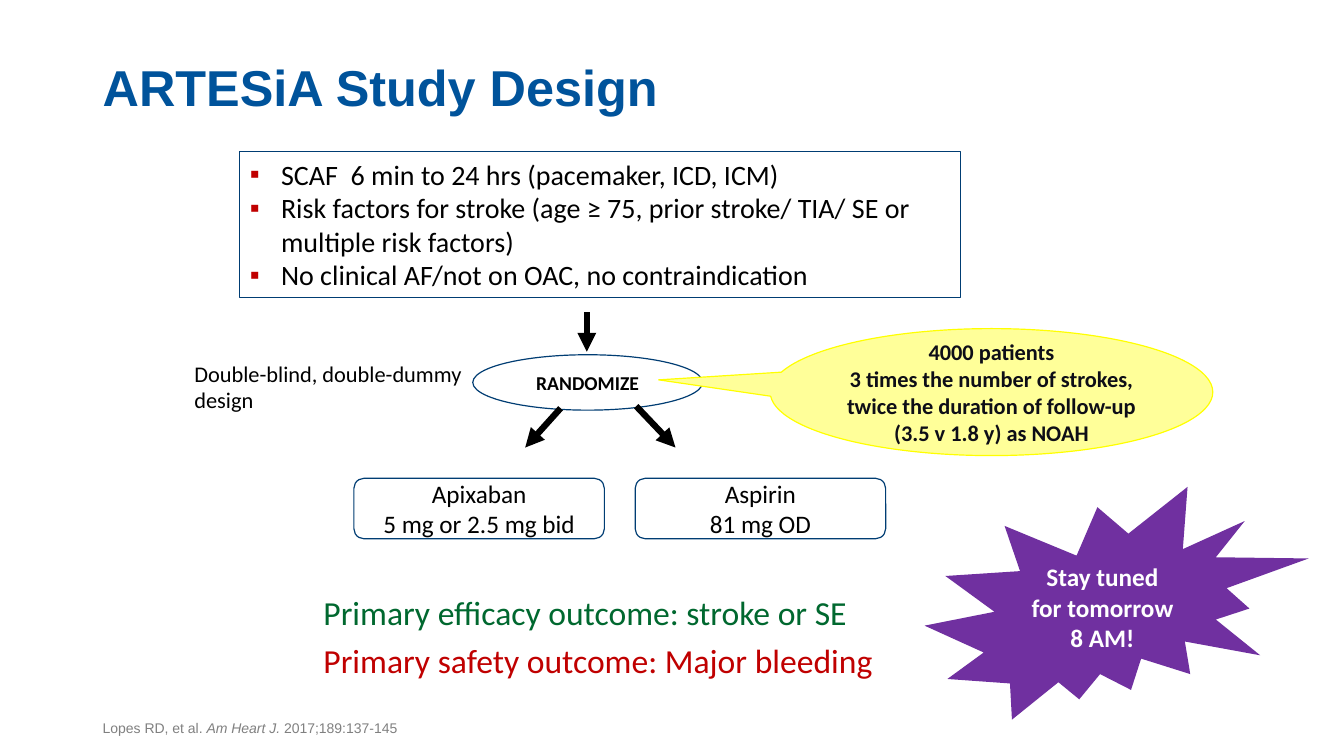
from dataclasses import dataclass

from lxml import etree
from pptx import Presentation
from pptx.dml.color import RGBColor
from pptx.enum.shapes import MSO_CONNECTOR, MSO_SHAPE
from pptx.enum.text import MSO_ANCHOR, PP_ALIGN
from pptx.oxml.ns import qn
from pptx.util import Inches, Pt

RECT, ROUNDED, OVAL = MSO_SHAPE.RECTANGLE, MSO_SHAPE.ROUNDED_RECTANGLE, MSO_SHAPE.OVAL
BUBBLE, BURST = MSO_SHAPE.OVAL_CALLOUT, MSO_SHAPE.EXPLOSION2
STRAIGHT = MSO_CONNECTOR.STRAIGHT
TOP, MIDDLE, BOTTOM = MSO_ANCHOR.TOP, MSO_ANCHOR.MIDDLE, MSO_ANCHOR.BOTTOM
LEFT, CENTER = PP_ALIGN.LEFT, PP_ALIGN.CENTER


@dataclass(frozen=True)
class Theme:
    heading_font: str = "Arial"
    body_font: str = "Calibri"
    heading: str = "00539B"
    citation: str = "808080"
    ink: str = "000000"
    outline: str = "003D73"
    green: str = "00682F"
    red: str = "C00000"
    bubble: str = "FFFF99"
    bubble_edge: str = "FFFF00"
    bubble_ink: str = "0E0E17"
    burst: str = "7030A0"
    white: str = "FFFFFF"
    title_size: int = 36
    outcome_size: int = 24
    criteria_size: int = 20
    arm_size: int = 18
    note_size: int = 16
    step_size: int = 14
    citation_size: int = 10
    outline_width: float = 0.85
    arrow_width: float = 4.5


THEME = Theme()

# Content: a paragraph is a string or a list of (text, italic) runs
TITLE = ["ARTESiA Study Design"]
CITATION = [[("Lopes RD, et al. ", False), ("Am Heart J. ", True), ("2017;189:137-145", False)]]
CRITERIA = [
    "SCAF  6 min to 24 hrs (pacemaker, ICD, ICM)",
    "Risk factors for stroke (age ≥ 75, prior stroke/ TIA/ SE or multiple risk factors)",
    "No clinical AF/not on OAC, no contraindication",
]
STEP = ["RANDOMIZE"]
BLINDING = ["Double-blind, double-dummy design"]
ARMS = [["Apixaban", "5 mg or 2.5 mg bid"], ["Aspirin", "81 mg OD"]]
SAMPLE = [
    "4000 patients",
    "3 times the number of strokes, twice the duration of follow-up (3.5 v 1.8 y) as NOAH",
]
OUTCOMES = ["Primary efficacy outcome: stroke or SE", "Primary safety outcome: Major bleeding"]
TEASER = ["Stay tuned for tomorrow 8 AM!"]

# Layout on a grid of 100 columns by 100 rows: left, top, width, height
MARGIN, TEXT_WIDTH = 6.9, 86.27
STEP_TOP = 46.93
TITLE_AT = (MARGIN, 0, TEXT_WIDTH, 16.13)
CITATION_AT = (MARGIN, 92.67, TEXT_WIDTH, 5.33)
CRITERIA_AT = (17.85, 20, 53.64, 19.33)
STEP_AT = (35.18, STEP_TOP, 17.1, 7.33)
BLINDING_AT = (13.73, STEP_TOP, 22.21, 8.53)
ARM_AT, ARM_PITCH = (26.33, 63.27, 18.64, 8), 20.93
SAMPLE_AT, SAMPLE_TIP = (57.31, 43.47, 32.93, 16.8), (-0.752, -0.096)
OUTCOMES_AT = (23.33, 77.6, 42.76, 13.2)
TEASER_AT = (68.79, 64.4, 28.58, 30.8)
ARROWS = [
    ((43.66, 41.33), (43.66, 46.53)),
    ((41.71, 54), (39.08, 59.2)),
    ((47.34, 53.73), (50.26, 59.2)),
]

deck = Presentation()
deck.slide_width, deck.slide_height = Inches(13.33), Inches(7.5)
slide = deck.slides.add_slide(deck.slide_layouts[6])


def place(*cells):
    """Turn alternating columns and rows into slide lengths."""
    sides = (deck.slide_width, deck.slide_height)
    return [round(cell * sides[i % 2] / 100) for i, cell in enumerate(cells)]


def add_bullet(paragraph):
    props = paragraph._p.get_or_add_pPr()
    props.set("marL", str(Inches(0.31)))
    props.set("indent", str(-Inches(0.31)))
    color = etree.SubElement(props, qn("a:buClr"))
    etree.SubElement(color, qn("a:srgbClr"), val=THEME.red)
    etree.SubElement(props, qn("a:buFont"), typeface=THEME.heading_font)
    etree.SubElement(props, qn("a:buChar"), char="▪")


def write(shape, paragraphs, size, colors=(THEME.ink,), font=THEME.body_font, bold=False,
          align=LEFT, anchor=MIDDLE, wrap=True, bullets=False, gap=None, spacing=None):
    """Fill a shape with text; the last colour serves all further paragraphs."""
    frame = shape.text_frame
    frame.word_wrap, frame.vertical_anchor = wrap, anchor
    for i, content in enumerate(paragraphs):
        paragraph = frame.add_paragraph() if i else frame.paragraphs[0]
        paragraph.alignment = align
        if bullets:
            add_bullet(paragraph)
        if gap and i:
            paragraph.space_before = Pt(gap)
        if spacing:
            paragraph.line_spacing = spacing
        for words, italic in [(content, False)] if isinstance(content, str) else content:
            run = paragraph.add_run()
            run.text = words
            run.font.name, run.font.size = font, Pt(size)
            run.font.bold, run.font.italic = bold, italic
            run.font.color.rgb = RGBColor.from_string(colors[min(i, len(colors) - 1)])


def add_text(at, paragraphs, size, **style):
    write(slide.shapes.add_textbox(*place(*at)), paragraphs, size, **style)


def add_box(kind, at, paragraphs, size, fill=None, edge=THEME.outline, tip=(), **style):
    box = slide.shapes.add_shape(kind, *place(*at))
    box.shadow.inherit = False
    for i, value in enumerate(tip):
        box.adjustments[i] = value
    if fill:
        box.fill.solid()
        box.fill.fore_color.rgb = RGBColor.from_string(fill)
    else:
        box.fill.background()
    if edge:
        box.line.color.rgb = RGBColor.from_string(edge)
        box.line.width = Pt(THEME.outline_width)
    else:
        box.line.fill.background()
    write(box, paragraphs, size, **style)


def add_arrow(start, end):
    arrow = slide.shapes.add_connector(STRAIGHT, *place(*start, *end))
    arrow.line.color.rgb = RGBColor.from_string(THEME.ink)
    arrow.line.width = Pt(THEME.arrow_width)
    etree.SubElement(arrow.line._get_or_add_ln(), qn("a:tailEnd"), type="triangle")
    etree.SubElement(arrow._element.spPr, qn("a:effectLst"))


# Title and citation
add_text(TITLE_AT, TITLE, THEME.title_size, colors=(THEME.heading,), font=THEME.heading_font,
         bold=True, anchor=BOTTOM, spacing=0.9)
add_text(CITATION_AT, CITATION, THEME.citation_size, colors=(THEME.citation,),
         font=THEME.heading_font, anchor=BOTTOM)

# Flow from criteria to treatment arms
add_box(RECT, CRITERIA_AT, CRITERIA, THEME.criteria_size, bullets=True)
add_box(OVAL, STEP_AT, STEP, THEME.step_size, bold=True, align=CENTER)
for column, arm in enumerate(ARMS):
    left, *rest = ARM_AT
    add_box(ROUNDED, (left + column * ARM_PITCH, *rest), arm, THEME.arm_size, align=CENTER)
for start, end in ARROWS:
    add_arrow(start, end)

# Notes, outcomes and teaser
add_text(BLINDING_AT, BLINDING, THEME.note_size, anchor=TOP)
add_box(BUBBLE, SAMPLE_AT, SAMPLE, THEME.note_size, fill=THEME.bubble, edge=THEME.bubble_edge,
        tip=SAMPLE_TIP, colors=(THEME.bubble_ink,), bold=True, align=CENTER)
add_text(OUTCOMES_AT, OUTCOMES, THEME.outcome_size, colors=(THEME.green, THEME.red),
         anchor=TOP, wrap=False, gap=6)
add_box(BURST, TEASER_AT, TEASER, THEME.arm_size, fill=THEME.burst, edge=None,
        colors=(THEME.white,), bold=True, align=CENTER)

deck.save("out.pptx")
